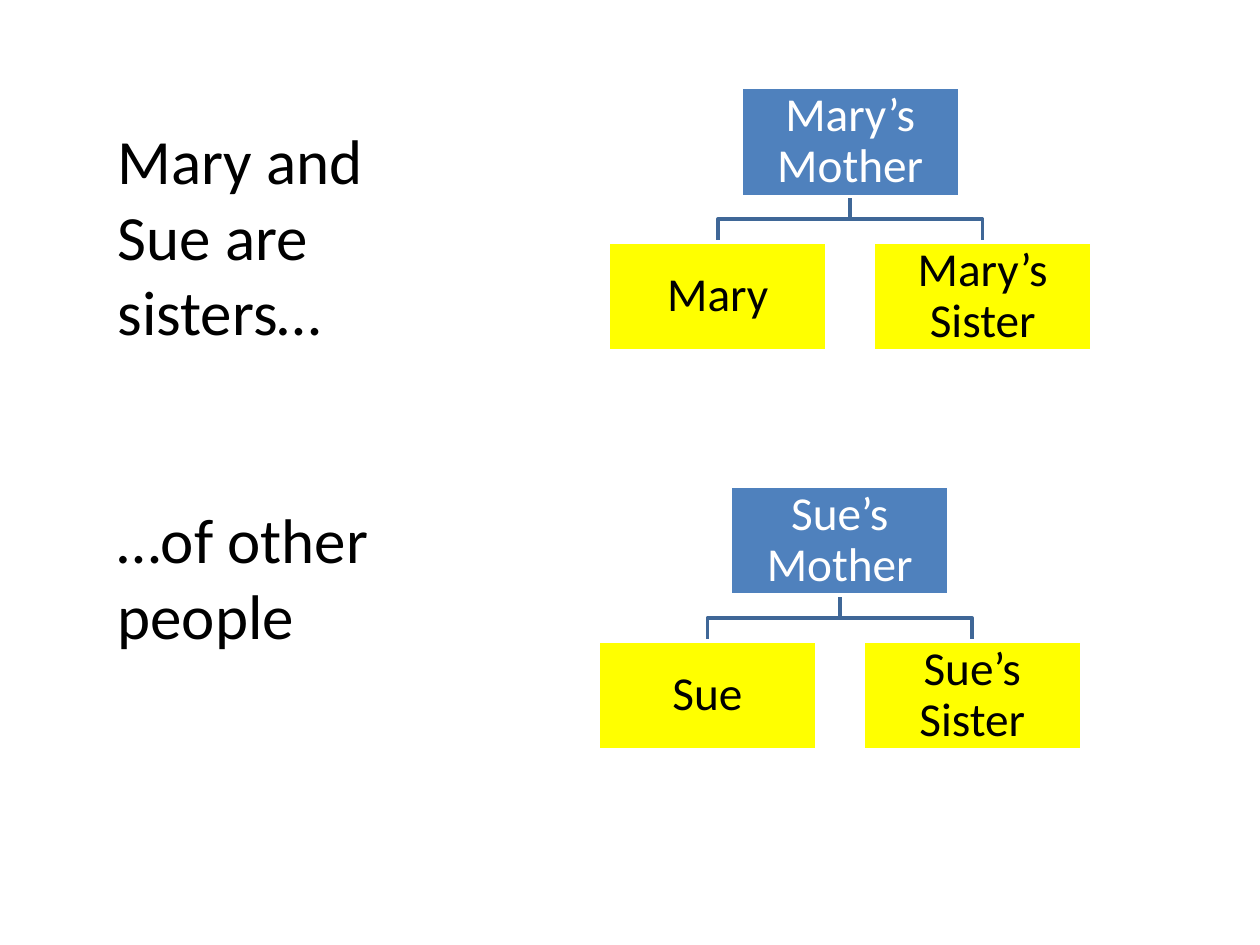
from pptx import Presentation
from pptx.dml.color import RGBColor
from pptx.enum.shapes import MSO_SHAPE
from pptx.enum.text import MSO_ANCHOR, MSO_AUTO_SIZE, PP_ALIGN
from pptx.util import Cm, Pt

RECTANGLE = MSO_SHAPE.RECTANGLE
MIDDLE = MSO_ANCHOR.MIDDLE
CENTER = PP_ALIGN.CENTER
GROW = MSO_AUTO_SIZE.SHAPE_TO_FIT_TEXT

COLORS = {
    "mother": "4F81BD",
    "daughter": "FFFF00",
    "branch": "3F6797",
    "light": "FFFFFF",
    "dark": "000000",
}
BOX_WIDTH, BOX_HEIGHT = 4.4, 2.2
BRANCH_HEIGHT = 0.92
SIBLING_OFFSET = 2.67  # from the mother's centre to each daughter's centre


class FamilySlide:
    def __init__(self, slide, font="Calibri", line_width=2):
        self.slide = slide
        self.font = font
        self.line_width = Pt(line_width)

    def color(self, name):
        return RGBColor.from_string(COLORS[name])

    def style_para(self, para, size, color):
        para.font.name = self.font
        para.font.size = Pt(size)
        para.font.color.rgb = self.color(color)

    def style_line(self, shape, color):
        shape.shadow.inherit = False
        shape.line.color.rgb = self.color(color)
        shape.line.width = self.line_width

    def person(self, name, center, top, fill, text_color):
        box = self.slide.shapes.add_shape(
            RECTANGLE, Cm(center - BOX_WIDTH / 2), Cm(top), Cm(BOX_WIDTH), Cm(BOX_HEIGHT))
        box.fill.solid()
        box.fill.fore_color.rgb = self.color(fill)
        self.style_line(box, "light")
        frame = box.text_frame
        frame.word_wrap = True
        frame.vertical_anchor = MIDDLE
        frame.margin_left = frame.margin_right = Cm(0.05)
        frame.margin_top = frame.margin_bottom = Cm(0.05)
        para = frame.paragraphs[0]
        para.text = name
        para.alignment = CENTER
        para.line_spacing = 0.9
        self.style_para(para, 27, text_color)

    def branch(self, start, end, top):
        """Draw a stepped line from a mother down to a daughter."""
        middle, bottom = top + BRANCH_HEIGHT / 2, top + BRANCH_HEIGHT
        builder = self.slide.shapes.build_freeform(Cm(start), Cm(top))
        corners = [(start, middle), (end, middle), (end, bottom)]
        builder.add_line_segments([(Cm(x), Cm(y)) for x, y in corners], close=False)
        line = builder.convert_to_shape()
        line.fill.background()
        self.style_line(line, "branch")

    def family(self, mother, daughters, center, top):
        branch_top = top + BOX_HEIGHT
        daughter_centers = (center - SIBLING_OFFSET, center + SIBLING_OFFSET)
        for daughter_center in daughter_centers:
            self.branch(center, daughter_center, branch_top)
        self.person(mother, center, top, "mother", "light")
        for name, daughter_center in zip(daughters, daughter_centers):
            self.person(name, daughter_center, branch_top + BRANCH_HEIGHT, "daughter", "dark")

    def statement(self, lines, left, top, width, height, gap):
        box = self.slide.shapes.add_textbox(Cm(left), Cm(top), Cm(width), Cm(height))
        frame = box.text_frame
        frame.word_wrap = True
        frame.auto_size = GROW
        for index, line in enumerate(lines):
            para = frame.add_paragraph() if index else frame.paragraphs[0]
            para.text = line
            para.space_before = Pt(gap if index else 0)
            self.style_para(para, 36, "dark")


def main():
    deck = Presentation()
    deck.slide_width, deck.slide_height = Cm(25.4), Cm(19.05)
    blank_layout = deck.slide_layouts[6]
    page = FamilySlide(deck.slides.add_slide(blank_layout))
    page.family("Mary’s Mother", ["Mary", "Mary’s Sister"], center=17.14, top=1.76)
    page.family("Sue’s Mother", ["Sue", "Sue’s Sister"], center=16.93, top=9.8)
    page.statement(["Mary and Sue are sisters…", "…of other people"],
                   left=2.12, top=2.33, width=7.41, height=11.02, gap=87)
    deck.save("out.pptx")


if __name__ == "__main__":
    main()
